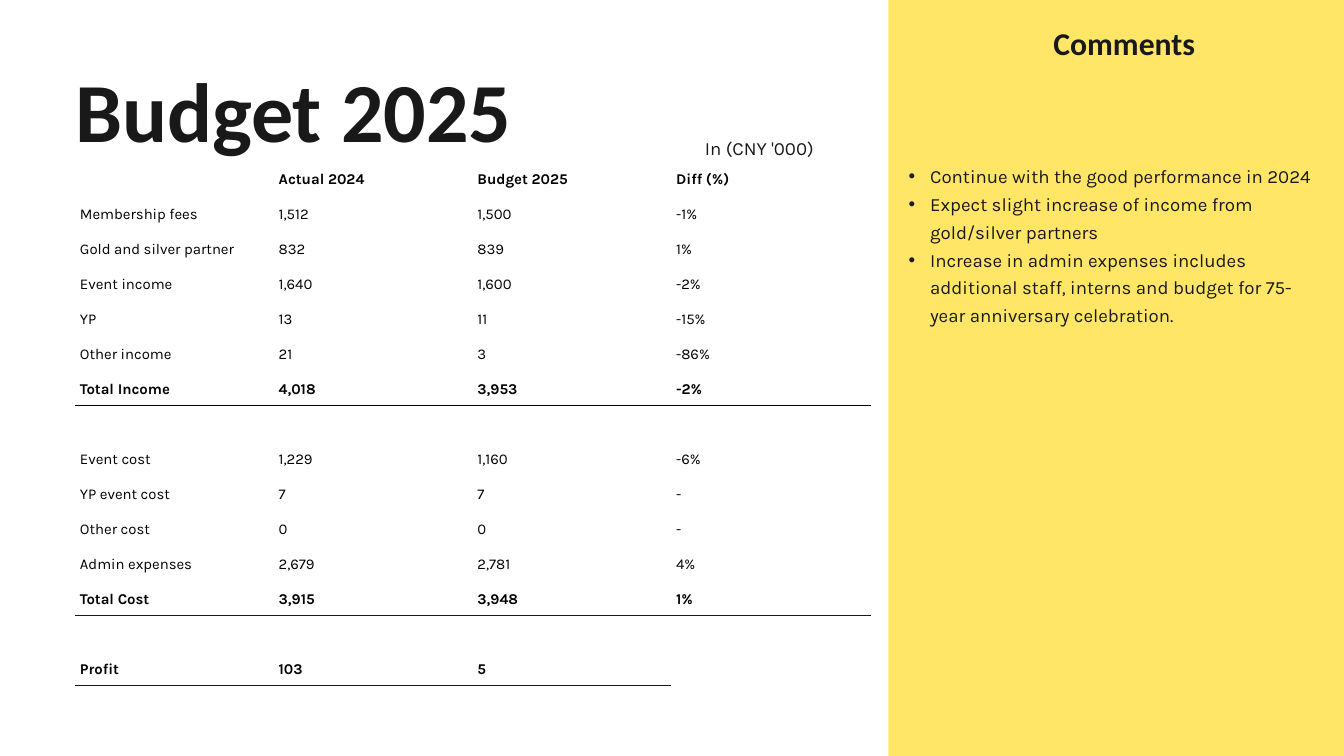
from lxml import etree
from pptx import Presentation
from pptx.dml.color import RGBColor
from pptx.enum.shapes import MSO_SHAPE
from pptx.enum.text import MSO_ANCHOR, MSO_AUTO_SIZE, PP_ALIGN
from pptx.oxml.ns import qn
from pptx.util import Inches, Pt

WHITE = RGBColor(0xFF, 0xFF, 0xFF)
BLACK = RGBColor(0x00, 0x00, 0x00)
INK = RGBColor(0x19, 0x19, 0x19)
YELLOW = RGBColor(0xFF, 0xE6, 0x67)

HEADING, BODY = "Calibri", "Karla"

BUDGET = [
    ("", "Actual 2024", "Budget 2025", "Diff (%)"),
    ("Membership fees", "1,512", "1,500", "-1%"),
    ("Gold and silver partner", "832", "839", "1%"),
    ("Event income", "1,640", "1,600", "-2%"),
    ("YP", "13", "11", "-15%"),
    ("Other income", "21", "3", "-86%"),
    ("Total Income", "4,018", "3,953", "-2%"),
    ("", "", "", ""),
    ("Event cost", "1,229", "1,160", "-6%"),
    ("YP event cost", "7", "7", "-"),
    ("Other cost", "0", "0", "-"),
    ("Admin expenses", "2,679", "2,781", "4%"),
    ("Total Cost", "3,915", "3,948", "1%"),
    ("", "", "", ""),
    ("Profit", "103", "5", ""),
]
RULES = {"Total Income": BLACK, "Total Cost": INK, "Profit": INK}

COMMENTS = [
    "Continue with the good performance in 2024",
    "Expect slight increase of income from gold/silver partners",
    "Increase in admin expenses includes additional staff, interns and "
    "budget for 75-year anniversary celebration.",
]


class Deck:
    """Slide style; boxes are (left, top, width, height) in % of the slide."""

    def __init__(self, width, height):
        self.prs = Presentation()
        self.prs.slide_width, self.prs.slide_height = width, height
        self.s = self.prs.slides.add_slide(self.prs.slide_layouts[6])

    def place(self, box):
        sides = (self.prs.slide_width, self.prs.slide_height) * 2
        return [round(share * side / 100) for share, side in zip(box, sides)]

    def style(self, p, font, size, color, bold, spacing):
        p.font.name, p.font.size, p.font.bold = font, Pt(size), bold
        p.font.color.rgb = color
        p.line_spacing = Pt(spacing)

    def panel(self, box, color):
        sp = self.s.shapes.add_shape(MSO_SHAPE.RECTANGLE, *self.place(box))
        sp.shadow.inherit = False
        sp.fill.solid()
        sp.fill.fore_color.rgb = color
        sp.line.fill.background()

    def text(self, box, lines, size, spacing, font=BODY, bold=False,
             align=PP_ALIGN.LEFT, bullets=False):
        tf = self.s.shapes.add_textbox(*self.place(box)).text_frame
        tf.word_wrap = True
        tf.auto_size = MSO_AUTO_SIZE.SHAPE_TO_FIT_TEXT
        tf.margin_left = tf.margin_top = tf.margin_right = tf.margin_bottom = 0
        for i, line in enumerate(lines):
            p = tf.paragraphs[0] if i == 0 else tf.add_paragraph()
            p.text, p.alignment = line, align
            self.style(p, font, size, INK, bold, spacing)
            if bullets:
                self.bullet(p)

    def bullet(self, p):
        p.level = 1
        pPr = p._p.get_or_add_pPr()
        pPr.set("marL", str(Inches(0.64)))
        pPr.set("indent", str(Inches(-0.32)))
        font = etree.Element(qn("a:buFont"), typeface="Arial")
        char = etree.Element(qn("a:buChar"), char="•")
        defaults = pPr.find(qn("a:defRPr"))
        defaults.addprevious(font)
        defaults.addprevious(char)

    def border(self, cell, side, color):
        ln = etree.SubElement(cell._tc.get_or_add_tcPr(), qn(f"a:ln{side}"),
                              w=str(Pt(1.5)))
        fill = etree.SubElement(ln, qn("a:solidFill"))
        etree.SubElement(fill, qn("a:srgbClr"), val=str(color))

    def table(self, box, rows, rules):
        table = self.s.shapes.add_table(
            len(rows), len(rows[0]), *self.place(box)).table
        table.first_row = table.horz_banding = False

        def rule_below(r, c):
            if r < 0 or not rows[r][c]:
                return WHITE
            return rules.get(rows[r][0], WHITE)

        for r, row in enumerate(rows):
            bold = r == 0 or row[0] in rules
            for c, value in enumerate(row):
                cell = table.cell(r, c)
                cell.vertical_anchor = MSO_ANCHOR.MIDDLE
                cell.margin_left = cell.margin_right = Inches(0.07)
                cell.margin_top = cell.margin_bottom = Inches(0.07)
                p = cell.text_frame.paragraphs[0]
                p.text = value
                self.style(p, BODY, 16, BLACK, bold, 22.4)
                self.border(cell, "L", WHITE)
                self.border(cell, "R", WHITE)
                self.border(cell, "T", rule_below(r - 1, c))
                self.border(cell, "B", rule_below(r, c))
                cell.fill.background()


def main():
    deck = Deck(Inches(20), Inches(11.25))

    # Comments background
    deck.panel((66.1, 0, 33.9, 100), YELLOW)

    # Budget table with its heading and unit
    deck.table((5.6, 21.16, 59.15, 69.6), BUDGET, RULES)
    deck.text((5.6, 7.73, 44.4, 13.42), ["Budget 2025"], 90, 108,
              HEADING, bold=True)
    deck.text((78.1, 2.76, 11.1, 4.89), ["Comments"], 34, 44.2,
              HEADING, bold=True, align=PP_ALIGN.CENTER)
    deck.text((52.3, 17.87, 8.4, 3.29), ["In (CNY '000)"], 20, 26,
              align=PP_ALIGN.CENTER)

    # Comment list
    deck.text((66, 21.16, 32.75, 22.04), COMMENTS, 20, 29.7, bullets=True)

    deck.prs.save("out.pptx")


if __name__ == "__main__":
    main()
